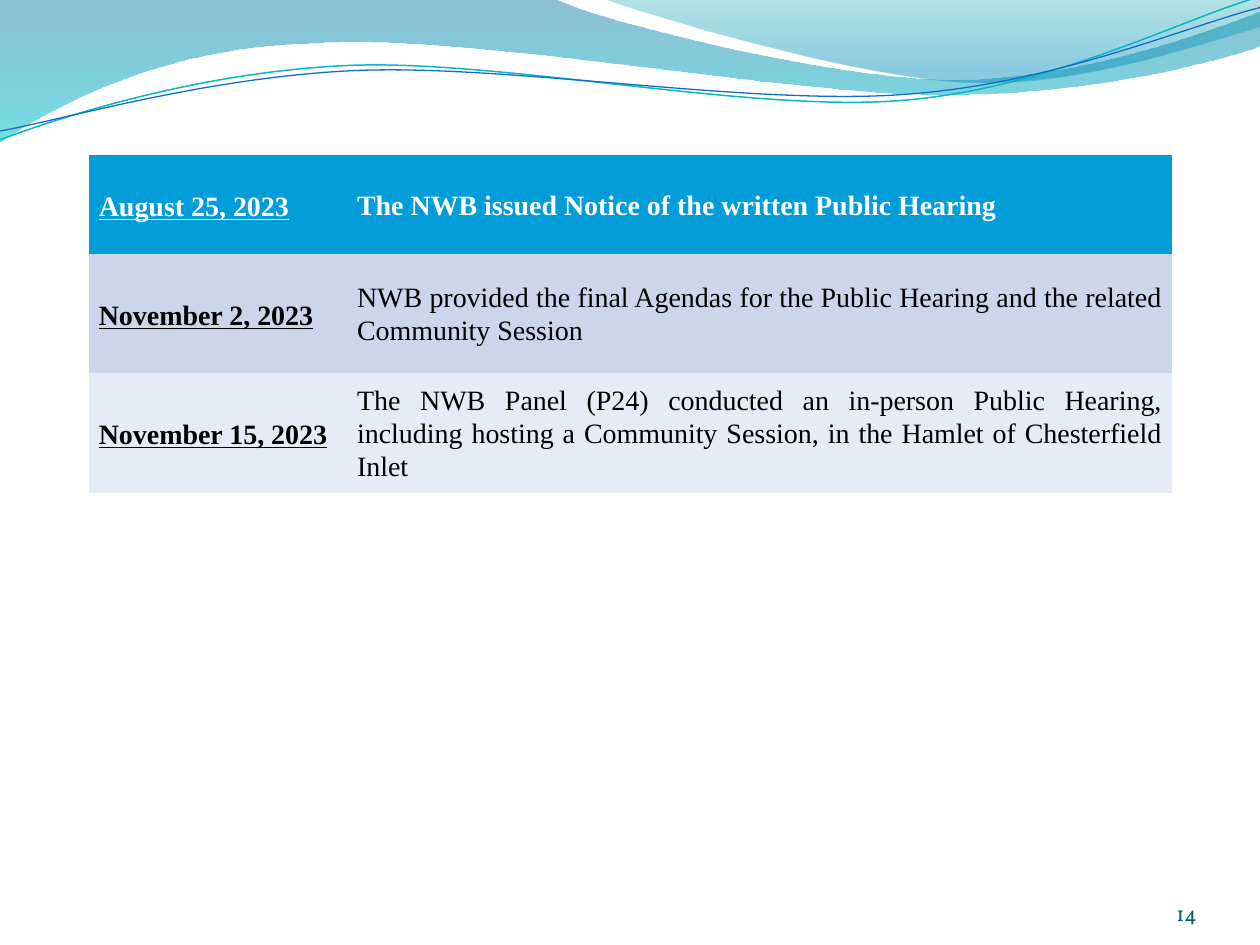
import pptx
import pptx.dml.color
import pptx.enum.text
import pptx.oxml.ns
import pptx.util
from lxml import etree

Inches = pptx.util.Inches
Pt = pptx.util.Pt
qn = pptx.oxml.ns.qn
ALIGN = pptx.enum.text.PP_ALIGN
ANCHOR = pptx.enum.text.MSO_ANCHOR
PLAIN_TABLE_STYLE = "{2D5ABB26-0587-4C30-8999-92F81FD0307C}"
COLORS = {
    "band_top": "0074A1", "band_bottom": "00C6CF",
    "corner_top": "00A1A9", "corner_bottom": "008BBF",
    "teal_line": "0AB8BF", "blue_line": "0F6FC6",
    "header": "009DD9", "row_dark": "CCD5EA", "row_light": "E7EBF5",
    "white": "FFFFFF", "black": "000000", "page_number": "045D75",
}


def rgb(name):
    return pptx.dml.color.RGBColor.from_string(COLORS[name])


def add_wave(start, segments, close):
    """Draw a freeform; a segment is one end point or the three points of a Bezier curve."""
    builder = slide.shapes.build_freeform(Inches(start[0]), Inches(start[1]))
    builder.add_line_segments([(Inches(x), Inches(y)) for segment in segments
                               for x, y in segment], close=close)
    shape = builder.convert_to_shape()
    shape.shadow.inherit = False
    # Join each three straight steps of a curve into one Bezier step
    steps = iter(shape.element.xpath(".//a:path/a:lnTo"))
    for segment in segments:
        first, *others = [next(steps) for point in segment]
        if others:
            curve = etree.Element(qn("a:cubicBezTo"))
            first.addprevious(curve)
            for step in (first, *others):
                curve.append(step[0])
                step.getparent().remove(step)
    return shape


presentation = pptx.Presentation()
presentation.slide_width = Inches(10)
presentation.slide_height = Inches(7.5)
slide = presentation.slides.add_slide(presentation.slide_layouts[6])

# Translucent bands: start, segments, then (position, colour, opacity %) stops
bands = [
    ((0, 0),
     [[(4.4, -0.01)],
      [(4.76, 0.17), (6.64, 0.63), (7.58, 0.63)],
      [(8.53, 0.63), (9.58, 0.26), (10, 0.09)],
      [(10.01, 0.36)],
      [(9.83, 0.44), (8.7, 0.76), (7.46, 0.75)],
      [(6.22, 0.75), (3.82, 0.28), (2.57, 0.34)],
      [(1.29, 0.36), (0.46, 0.83), (-0.01, 1.13)],
      [(0, 0)]],
     [(0, "band_top", 45), (1, "band_bottom", 55)]),
    ((4.79, -0.01),
     [[(5.09, 0.11), (6.82, 0.62), (7.69, 0.65)],
      [(8.56, 0.69), (9.61, 0.32), (10, 0.21)],
      [(10, 0)],
      [(4.79, -0.01)]],
     [(0, "corner_top", 30), (0.8, "corner_bottom", 45)]),
]
for start, segments, stops in bands:
    shape = add_wave(start, segments, close=True)
    shape.line.fill.background()
    shape.fill.gradient()
    shape.fill.gradient_angle = 270
    for stop, (position, color, opacity) in zip(shape.fill.gradient_stops, stops):
        stop.position = position
        stop.color.rgb = rgb(color)
    for element, (position, color, opacity) in zip(
            shape.element.xpath(".//a:gs/a:srgbClr"), stops):
        etree.SubElement(element, qn("a:alpha"), val=str(opacity * 1000))

# Thin wave lines
wave_lines = [
    ((0, 1.11),
     [[(0.48, 0.93), (1.58, 0.57), (2.77, 0.52)],
      [(3.95, 0.47), (5.93, 0.89), (7.13, 0.8)],
      [(8.33, 0.71), (9.38, 0.15), (9.98, -0.02)]], "teal_line", 0.85),
    ((0, 1.04),
     [[(0.47, 0.96), (1.64, 0.61), (2.83, 0.56)],
      [(4.03, 0.51), (5.97, 0.84), (7.17, 0.75)],
      [(8.36, 0.67), (9.41, 0.21), (10, 0.06)]], "blue_line", 0.75),
]
for start, segments, color, width in wave_lines:
    shape = add_wave(start, segments, close=False)
    shape.fill.background()
    shape.line.color.rgb = rgb(color)
    shape.line.width = Pt(width)

# Page number
frame = slide.shapes.add_textbox(Inches(8.67), Inches(6.95), Inches(0.83), Inches(0.4)).text_frame
frame.word_wrap = True
frame.vertical_anchor = ANCHOR.BOTTOM
frame.margin_left = frame.margin_right = frame.margin_top = frame.margin_bottom = 0
paragraph = frame.paragraphs[0]
paragraph.text = "14"
paragraph.alignment = ALIGN.RIGHT
paragraph.font.size = Pt(12)
paragraph.font.name = "Vollkorn"
paragraph.font.color.rgb = rgb("page_number")

# Hearing timeline: date, event, fill, text colour, row height
events = [
    ("August 25, 2023", "The NWB issued Notice of the written Public Hearing",
     "header", "white", 0.79),
    ("November 2, 2023",
     "NWB provided the final Agendas for the Public Hearing and the related Community Session",
     "row_dark", "black", 0.94),
    ("November 15, 2023",
     "The NWB Panel (P24) conducted an in-person Public Hearing, including hosting a "
     "Community Session, in the Hamlet of Chesterfield Inlet",
     "row_light", "black", 0.95),
]
table_shape = slide.shapes.add_table(len(events), 2, Inches(0.71), Inches(1.23),
                                     Inches(8.58), Inches(2.68))
table_shape.element.xpath(".//a:tableStyleId")[0].text = PLAIN_TABLE_STYLE
table = table_shape.table
table.columns[0].width = Inches(2.05)
table.columns[1].width = Inches(6.54)
for row, (date, event, fill, color, height) in enumerate(events):
    table.rows[row].height = Inches(height)
    for column, text in enumerate((date, event)):
        is_date = column == 0
        cell = table.cell(row, column)
        cell.fill.solid()
        cell.fill.fore_color.rgb = rgb(fill)
        cell.vertical_anchor = ANCHOR.MIDDLE
        cell.margin_left = cell.margin_right = Pt(5.4)
        cell.margin_top = cell.margin_bottom = 0
        paragraph = cell.text_frame.paragraphs[0]
        paragraph.text = text
        paragraph.alignment = ALIGN.LEFT if is_date else ALIGN.JUSTIFY
        paragraph.line_spacing = 1.15 if is_date else 1.06
        paragraph.space_after = Pt(10 if is_date else 8)
        paragraph.font.size = Pt(16)
        paragraph.font.name = "Times New Roman"
        paragraph.font.bold = is_date or row == 0
        paragraph.font.underline = is_date
        paragraph.font.color.rgb = rgb(color)

presentation.save("out.pptx")
